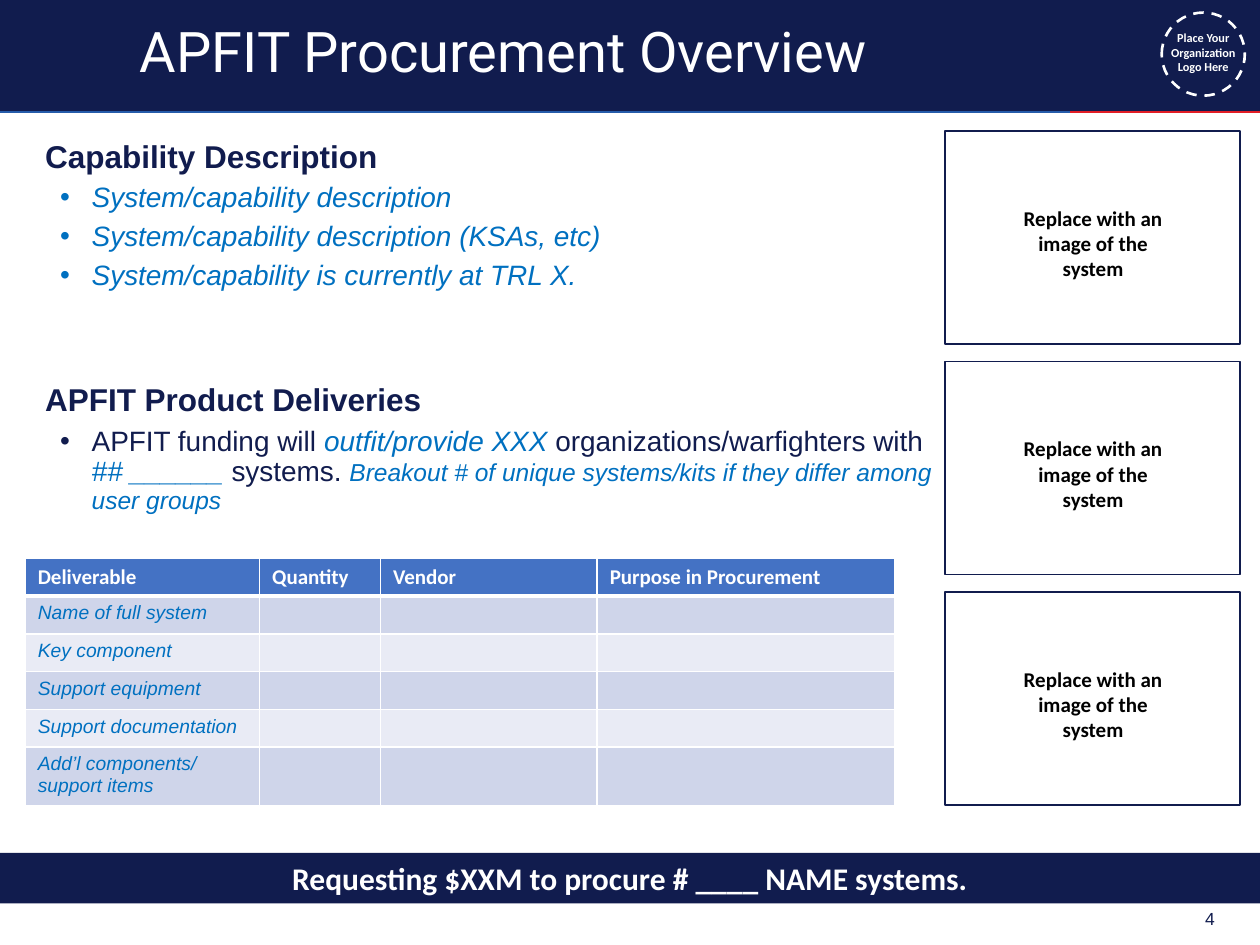
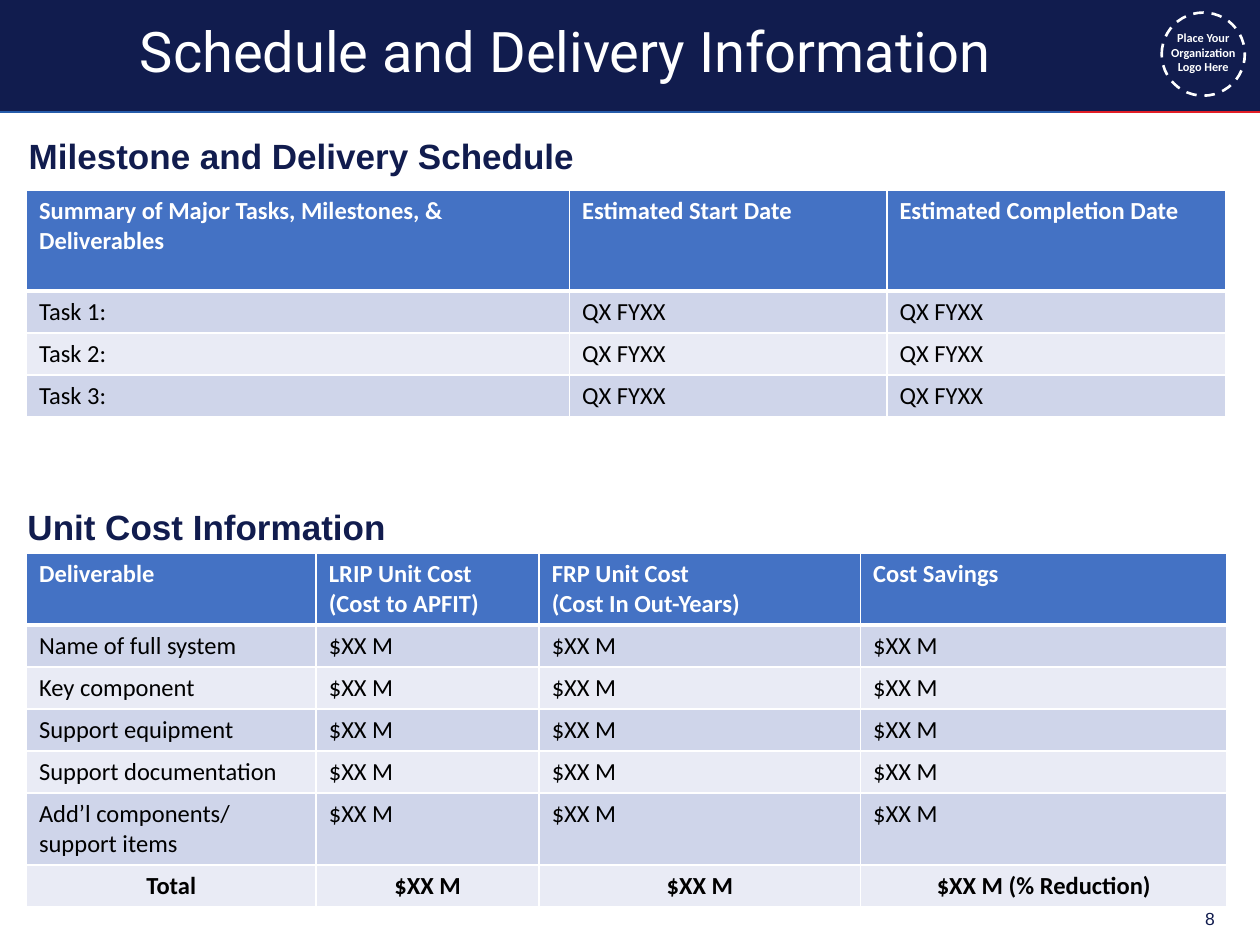
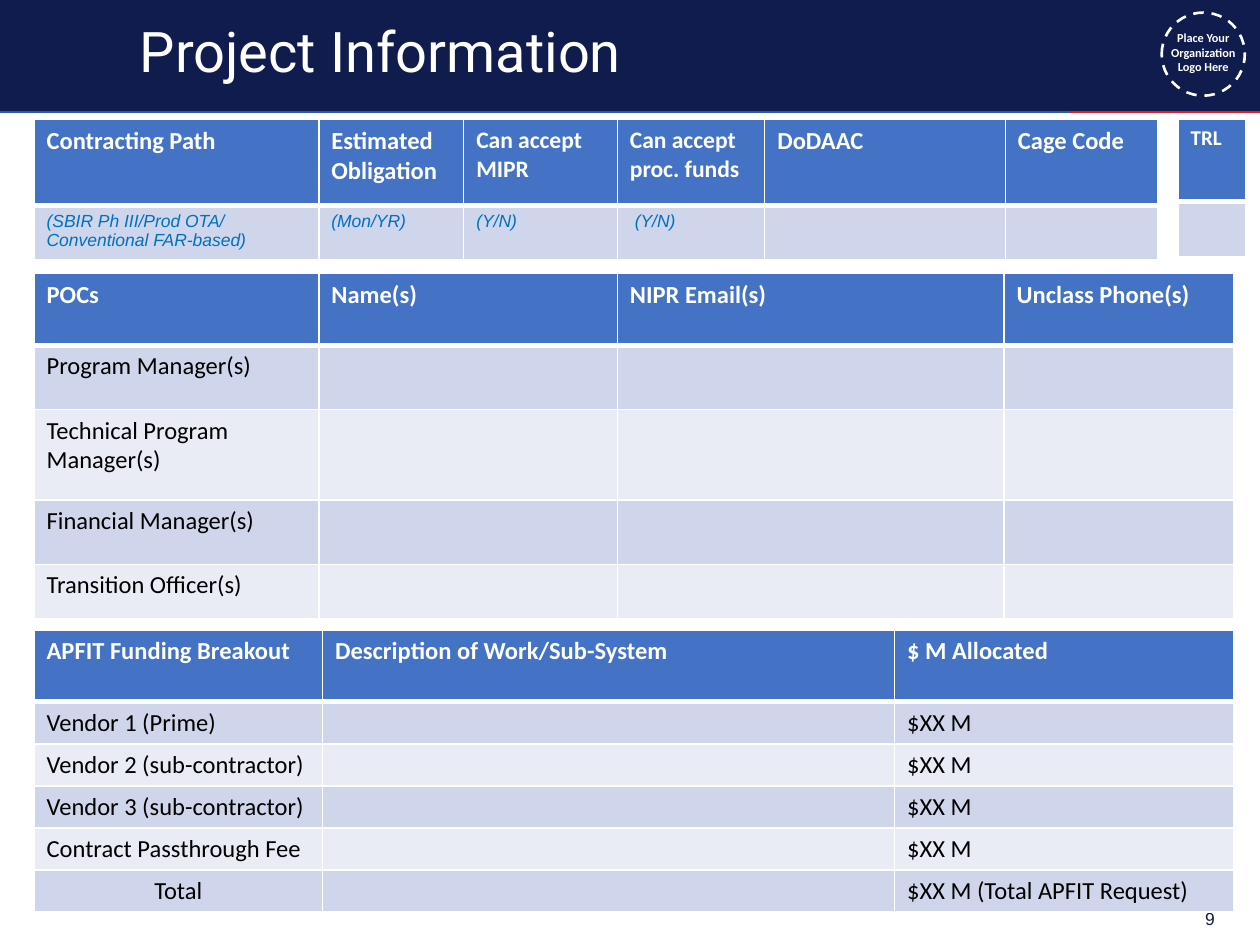
from dataclasses import dataclass, field

from lxml.etree import SubElement
from pptx import Presentation
from pptx.dml.color import RGBColor
from pptx.enum.dml import MSO_LINE
from pptx.enum.shapes import MSO_CONNECTOR, MSO_SHAPE
from pptx.enum.text import MSO_ANCHOR as Anchor, MSO_AUTO_SIZE, PP_ALIGN as Align
from pptx.oxml.ns import qn
from pptx.util import Inches, Pt

NAVY, WHITE, BLACK = "111C4E", "FFFFFF", "000000"
RULE_BLUE, RULE_RED, PROMPT_BLUE = "265CAA", "E21E26", "0070C0"
HEADER_FILL, BAND_FILLS = "4472C4", ("CFD5EA", "E9EBF5")
BAND_HEIGHT, RULE_SPLIT = 0.89, 8.49
PLAIN = dict(size=14, name="Calibri", color=BLACK)
PROMPT = dict(name="Arial", color=PROMPT_BLUE, italic=True)


@dataclass
class Grid:
    left: float
    top: float
    columns: list
    heights: list
    header: list
    rows: list
    header_size: float = 14
    header_sizes: dict = field(default_factory=dict)  # column: size
    body_font: dict = field(default_factory=lambda: PLAIN)
    centred_totals: int = 0  # centred cells in the last row
    bold_total: bool = False


DELIVERABLES = ["Name of full system", "Key component", "Support equipment",
                "Support documentation", "Add’l components/ support items"]
COST, DATE = "$XX M", "QX FYXX"

# Each body entry: level, space before, runs as (text, font changes)
CAPABILITY = [
    (0, 0, [("Capability Description", {})]),
    (1, 5, [("System/capability description", PROMPT)]),
    (1, 5, [("System/capability description (KSAs, etc)", PROMPT)]),
    (1, 5, [("System/capability is currently at TRL X.", PROMPT)]),
    (0, 53, [("APFIT Product Deliveries", {})]),
    (1, 5, [("APFIT funding will ", {}),
            ("outfit/provide XXX ", PROMPT),
            ("organizations/warfighters with ", {}),
            ("## ______ ", PROMPT),
            ("systems. ", {}),
            ("Breakout # of unique systems/kits if they differ among user groups",
             dict(PROMPT, size=14))]),
]
IMAGE_CAPTION = "Replace with an image of the system"
REQUEST = "Requesting $XXM to procure # ____ NAME systems."

PROCUREMENT = Grid(
    0.2, 4.43, [1.86, 0.96, 1.72, 2.36], [0.3] * 5 + [0.44],
    ["Deliverable", "Quantity", "Vendor", "Purpose in Procurement"],
    [[item, "", "", ""] for item in DELIVERABLES],
    header_size=12, body_font=dict(PROMPT, size=11))

SCHEDULE = Grid(
    0.21, 1.51, [4.31, 2.52, 2.69], [0.8] + [0.33] * 3,
    ["Summary of Major Tasks, Milestones, & Deliverables",
     "Estimated Start Date", "Estimated Completion Date"],
    [[f"Task {number}:", DATE, DATE] for number in (1, 2, 3)])

UNIT_COSTS = Grid(
    0.21, 4.39, [2.3, 1.77, 2.55, 2.91], [0.57] + [0.33] * 4 + [0.57, 0.33],
    ["Deliverable", "LRIP Unit Cost (Cost to APFIT)",
     "FRP Unit Cost\n(Cost In Out-Years)", "Cost Savings"],
    [[item, COST, COST, COST] for item in DELIVERABLES]
    + [["Total", COST, COST, "$XX M (% Reduction)"]],
    centred_totals=4, bold_total=True)

FUNDING = Grid(
    0.27, 5, [2.29, 4.54, 2.69], [0.57] + [0.33] * 5,
    ["APFIT Funding Breakout", "Description of Work/Sub-System", "$ M Allocated"],
    [["Vendor 1 (Prime)", "", COST],
     ["Vendor 2 (sub-contractor)", "", COST],
     ["Vendor 3 (sub-contractor)", "", COST],
     ["Contract Passthrough Fee", "", COST],
     ["Total", "", "$XX M (Total APFIT Request)"]],
    centred_totals=1)

READINESS = Grid(9.35, 0.95, [0.54], [0.65, 0.44], ["TRL"], [[""]], header_size=12)

CONTACTS = Grid(
    0.27, 2.17, [2.26, 2.37, 3.07, 1.82], [0.57, 0.51, 0.72, 0.51, 0.43],
    ["POCs", "Name(s)", "NIPR Email(s)", "Unclass Phone(s)"],
    [[role, "", "", ""] for role in (
        "Program Manager(s)", "Technical Program Manager(s)",
        "Financial Manager(s)", "Transition Officer(s)")])

CONTRACTING = Grid(
    0.27, 0.95, [2.26, 1.15, 1.22, 1.17, 1.91, 1.21], [0.68, 0.43],
    ["Contracting Path", "Estimated Obligation", "Can accept MIPR",
     "Can accept proc. funds", "DoDAAC", "Cage Code"],
    [["(SBIR Ph III/Prod OTA/\nConventional FAR-based)",
      "(Mon/YR)", "(Y/N)", " (Y/N)", "", ""]],
    header_sizes={2: 13.5, 3: 13.5}, body_font=dict(PROMPT, size=10))


def rgb(color):
    return RGBColor.from_string(color)


def place(*lengths):
    return [Inches(length) for length in lengths]


def set_font(font, size=None, name=None, color=None, bold=None, italic=None):
    if size:
        font.size = Pt(size)
    if name:
        font.name = name
    if color:
        font.color.rgb = rgb(color)
    if bold is not None:
        font.bold = bold
    if italic is not None:
        font.italic = italic


def write(frame, text, align=Align.LEFT, **font):
    frame.text = text
    for paragraph in frame.paragraphs:
        paragraph.alignment = align
        set_font(paragraph.font, **font)


def add_text(shapes, at, text, wrap=True, anchor=Anchor.TOP, **style):
    frame = shapes.add_textbox(*place(*at)).text_frame
    frame.word_wrap = wrap
    frame.vertical_anchor = anchor
    write(frame, text, **style)


def add_panel(shapes, kind, at, fill=None, line=None, width=1):
    panel = shapes.add_shape(kind, *place(*at))
    panel.shadow.inherit = False
    if fill:
        panel.fill.solid()
        panel.fill.fore_color.rgb = rgb(fill)
    else:
        panel.fill.background()
    if line:
        panel.line.color.rgb = rgb(line)
        panel.line.width = Pt(width)
    else:
        panel.line.fill.background()
    return panel


def add_rule(shapes, start, end, color):
    rule = shapes.add_connector(MSO_CONNECTOR.STRAIGHT,
                                *place(start, BAND_HEIGHT, end, BAND_HEIGHT))
    rule.line.color.rgb = rgb(color)
    rule.line.width = Pt(1)
    SubElement(rule.element.spPr, qn("a:effectLst"))
    return rule


def build_frame(slide, layout):
    """Draw the header band and logo spot, then move them to the layout."""
    shapes = slide.shapes
    band = add_panel(shapes, MSO_SHAPE.RECTANGLE, (0, 0, 10, BAND_HEIGHT), NAVY)
    blue_rule = add_rule(shapes, 0, RULE_SPLIT, RULE_BLUE)
    red_rule = add_rule(shapes, 10, RULE_SPLIT, RULE_RED)
    logo_spot = shapes.add_group_shape()
    ring = add_panel(logo_spot.shapes, MSO_SHAPE.OVAL, (9.22, 0.1, 0.66, 0.66),
                     line=WHITE, width=1.5)
    ring.line.dash_style = MSO_LINE.DASH
    add_text(logo_spot.shapes, (9.17, 0.19, 0.76, 0.45),
             "Place Your Organization Logo Here", align=Align.CENTER,
             size=7, name="Calibri", color=WHITE, bold=True)
    for part in (band, blue_rule, red_rule, logo_spot):
        layout.shapes.element.append(part.element)


def start_slide(deck, title, number):
    layout = deck.slide_layouts[5]
    slide = deck.slides.add_slide(layout)
    if len(deck.slides) == 1:
        build_frame(slide, layout)
    heading = slide.shapes.title
    heading.left, heading.top, heading.width, heading.height = place(
        1.01, 0.06, 7.57, 0.74)
    frame = heading.text_frame
    frame.auto_size = MSO_AUTO_SIZE.NONE
    frame.vertical_anchor = Anchor.MIDDLE
    write(frame, title, size=32, name="Roboto", color=WHITE)
    frame.paragraphs[0].line_spacing = 0.9
    add_text(slide.shapes, (8.49, 7.09, 1.25, 0.4), str(number),
             anchor=Anchor.MIDDLE, align=Align.RIGHT,
             size=10, name="Arial", color=NAVY)
    return slide.shapes


def set_borders(cell, top, bottom):
    properties = cell._tc.get_or_add_tcPr()
    for side, width in (("L", 1), ("R", 1), ("T", top), ("B", bottom)):
        border = SubElement(properties, qn(f"a:ln{side}"), w=str(Pt(width)))
        fill = SubElement(border, qn("a:solidFill"))
        SubElement(fill, qn("a:srgbClr"), val=WHITE)


def add_grid(shapes, grid):
    table = shapes.add_table(
        len(grid.heights), len(grid.columns),
        *place(grid.left, grid.top, sum(grid.columns), sum(grid.heights))).table
    for column, width in zip(table.columns, grid.columns):
        column.width = Inches(width)
    for row, height in zip(table.rows, grid.heights):
        row.height = Inches(height)
    for r, texts in enumerate([grid.header] + grid.rows):
        is_total = r == len(grid.rows)
        for c, text in enumerate(texts):
            cell = table.cell(r, c)
            set_borders(cell, top=3 if r == 1 else 1, bottom=3 if r == 0 else 1)
            cell.fill.solid()
            cell.fill.fore_color.rgb = rgb(BAND_FILLS[(r - 1) % 2] if r else HEADER_FILL)
            if r == 0:
                font = dict(size=grid.header_sizes.get(c, grid.header_size),
                            name="Calibri", color=WHITE, bold=True)
            else:
                font = dict(grid.body_font, bold=is_total and grid.bold_total)
            centred = is_total and c < grid.centred_totals
            write(cell.text_frame, text, Align.CENTER if centred else Align.LEFT, **font)


def add_capability(shapes):
    frame = shapes.add_textbox(*place(0.26, 1.07, 7.24, 3.19)).text_frame
    frame.word_wrap = True
    for index, (level, space, runs) in enumerate(CAPABILITY):
        paragraph = frame.add_paragraph() if index else frame.paragraphs[0]
        if level:
            properties = paragraph._p.get_or_add_pPr()
            properties.set("marL", str(Inches(0.37)))
            properties.set("indent", str(Inches(-0.25)))
            SubElement(properties, qn("a:buFont"), typeface="Arial")
            SubElement(properties, qn("a:buChar"), char="•")
        paragraph.line_spacing = 0.9
        if space:
            paragraph.space_before = Pt(space)
        base = dict(size=16 if level else 18, name="Arial", color=NAVY, bold=not level)
        if len(runs) == 1:
            base.update(runs[0][1])
        set_font(paragraph.font, **base)
        for text, changes in runs:
            run = paragraph.add_run()
            run.text = text
            if len(runs) > 1:
                set_font(run.font, **changes)


def add_image_spots(shapes):
    for row in range(3):
        top = 1.04 + 1.83 * row
        spot = shapes.add_group_shape().shapes
        add_panel(spot, MSO_SHAPE.RECTANGLE, (7.5, top, 2.34, 1.69), line=NAVY)
        add_text(spot, (7.92, top + 0.54, 1.51, 0.71), IMAGE_CAPTION,
                 align=Align.CENTER, size=12, name="Calibri", color=BLACK, bold=True)


def add_request_bar(shapes):
    bar = add_panel(shapes, MSO_SHAPE.RECTANGLE, (0, 6.77, 10, 0.4), NAVY)
    bar.text_frame.vertical_anchor = Anchor.MIDDLE
    write(bar.text_frame, REQUEST, Align.CENTER,
          size=18, name="Calibri", color=WHITE, bold=True)


def main():
    deck = Presentation()
    deck.slide_width, deck.slide_height = place(10, 7.5)

    overview = start_slide(deck, "APFIT Procurement Overview", 4)
    add_capability(overview)
    add_grid(overview, PROCUREMENT)
    add_image_spots(overview)
    add_request_bar(overview)

    delivery = start_slide(deck, "Schedule and Delivery Information", 8)
    for grid in (SCHEDULE, UNIT_COSTS):
        add_grid(delivery, grid)
    for at, text in (((0.12, 3.96, 3.07, 0.44), "Unit Cost Information"),
                     ((0.13, 1.02, 4.56, 0.44), "Milestone and Delivery Schedule")):
        add_text(delivery, at, text, wrap=False,
                 size=20, name="Arial", color=NAVY, bold=True)

    project = start_slide(deck, "Project Information", 9)
    for grid in (FUNDING, READINESS, CONTACTS, CONTRACTING):
        add_grid(project, grid)

    deck.save("out.pptx")


if __name__ == "__main__":
    main()
